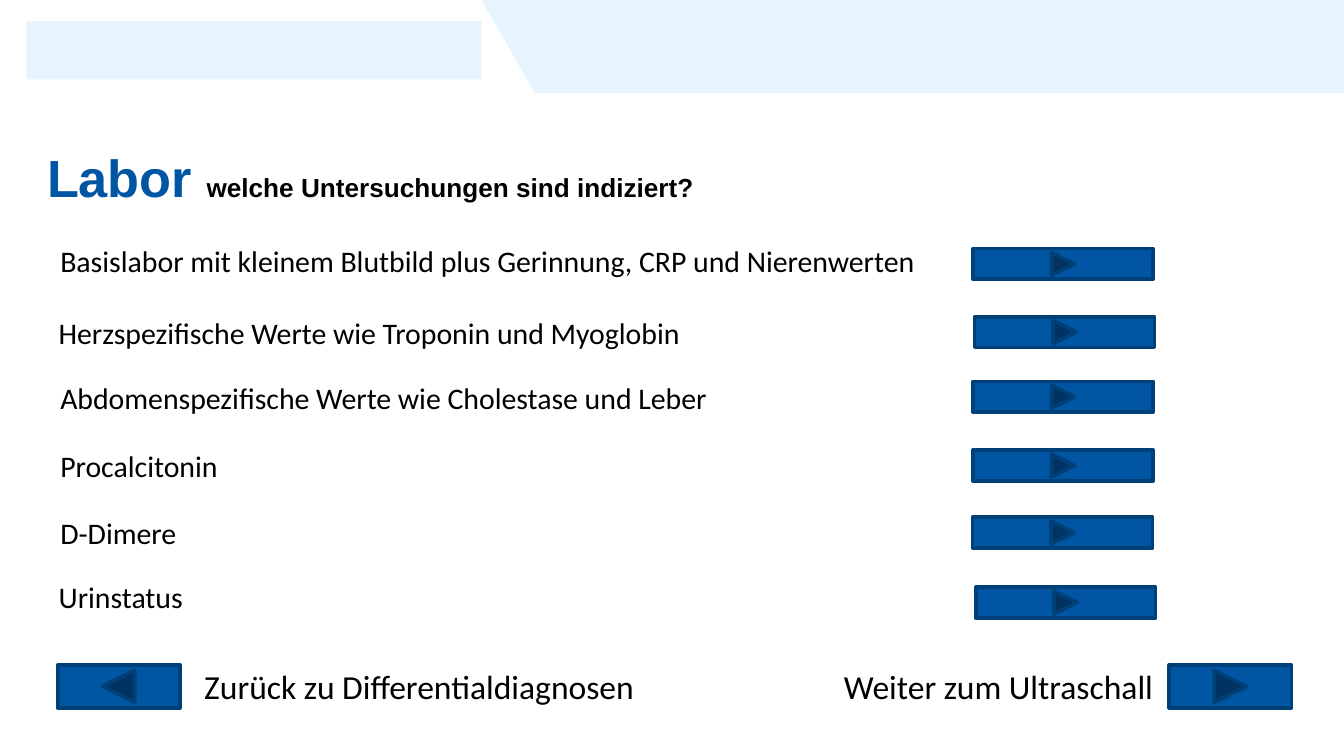
"""Build the lab tests slide with its navigation buttons."""
from pptx import Presentation
from pptx import util as u
from pptx.dml import color
from pptx.enum import shapes, text

Cm = u.Cm
KIND = shapes.MSO_SHAPE
HUES = {"blue": "0056A2", "edge": "004078", "pale": "E5F4FD", "ink": "000000"}
TESTS = [
    ("Basislabor mit kleinem Blutbild plus Gerinnung, CRP und Nierenwerten", 0.89, 4.47, 18.39, 4.7),
    ("Herzspezifische Werte wie Troponin und Myoglobin", 0.86, 5.82, 18.42, 5.99),
    ("Abdomenspezifische Werte wie Cholestase und Leber", 0.89, 7.06, 18.39, 7.21),
    ("Procalcitonin", 0.89, 8.33, 18.39, 8.51),
    ("D-Dimere", 0.89, 9.6, 18.38, 9.78),
    ("Urinstatus", 0.86, 10.82, 18.44, 11.1),
]


def hue(name):
    return color.RGBColor.from_string(HUES[name])


def paint(shape, fill, line=None):
    shape.shadow.inherit = False
    shape.fill.solid()
    shape.fill.fore_color.rgb = hue(fill)
    if line:
        shape.line.color.rgb = hue(line)
        shape.line.width = u.Pt(2)
    else:
        shape.line.fill.background()


def style(run, size, font="Calibri", tint="ink", bold=False):
    run.font.size = u.Pt(size)
    run.font.name = font
    run.font.bold = bold
    run.font.color.rgb = hue(tint)


def write(slide, words, left, top, width, high=0.94, anchor=text.MSO_ANCHOR.TOP, **form):
    box = slide.shapes.add_textbox(Cm(left), Cm(top), Cm(width), Cm(high))
    frame = box.text_frame
    frame.word_wrap = True
    frame.vertical_anchor = anchor
    run = frame.paragraphs[0].add_run()
    run.text = words
    style(run, **form)
    return frame.paragraphs[0]


def button(slide, kind, left, top, width, high):
    shape = slide.shapes.add_shape(kind, Cm(left), Cm(top), Cm(width), Cm(high))
    paint(shape, "blue", "edge")


def header(slide):
    mark = slide.shapes.add_shape(KIND.RECTANGLE, Cm(0.5), Cm(0.4), Cm(8.6), Cm(1.1))
    paint(mark, "pale")
    pen = slide.shapes.build_freeform(Cm(9.1), 0)
    pen.add_line_segments([(Cm(x), Cm(y)) for x, y in [(10.11, 1.76), (25.4, 1.76), (25.4, 0)]])
    paint(pen.convert_to_shape(), "pale")


def title(slide):
    line = write(slide, "Labor ", 0.64, 2.34, 24.05, 2.01, text.MSO_ANCHOR.MIDDLE,
                 size=28, font="Arial", tint="blue", bold=True)
    run = line.add_run()
    run.text = "welche Untersuchungen sind indiziert?"
    style(run, 14, "Arial", bold=True)


def main():
    deck = Presentation()
    deck.slide_width, deck.slide_height = Cm(25.4), Cm(14.29)
    slide = deck.slides.add_slide(deck.slide_layouts[6])
    header(slide)
    title(slide)
    for words, left, top, x, y in TESTS:
        write(slide, words, left, top, 17.3, size=16)
        button(slide, KIND.ACTION_BUTTON_FORWARD_OR_NEXT, x, y, 3.4, 0.58)
    button(slide, KIND.ACTION_BUTTON_BACK_OR_PREVIOUS, 1.09, 12.57, 2.31, 0.81)
    write(slide, "Zurück zu Differentialdiagnosen", 3.61, 12.47, 8.9, 1.02, size=18)
    write(slide, "Weiter zum Ultraschall", 15.7, 12.47, 6.4, 1.02, size=18)
    button(slide, KIND.ACTION_BUTTON_FORWARD_OR_NEXT, 22.1, 12.57, 2.31, 0.81)
    deck.save("out.pptx")


if __name__ == "__main__":
    main()
